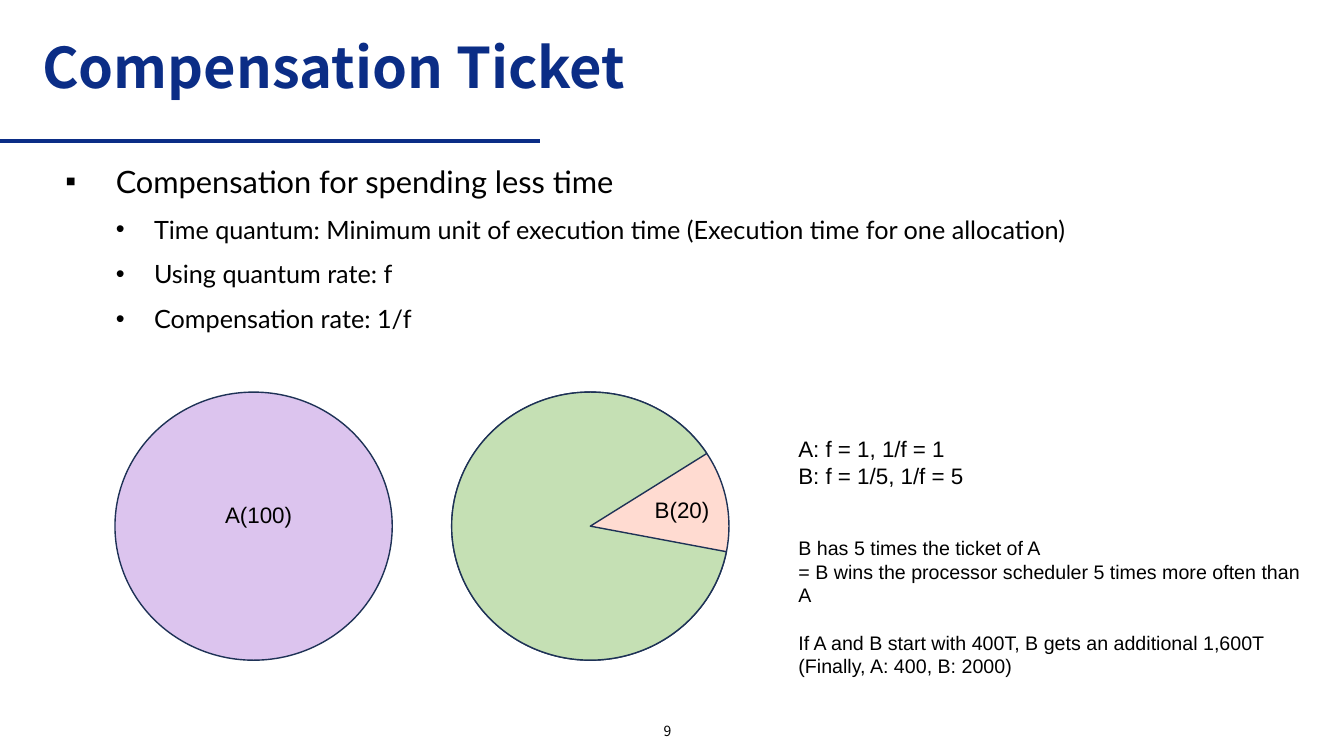
import pptx
import pptx.util
import pptx.dml.color
import pptx.enum.shapes
import pptx.enum.text
import pptx.oxml.ns
import lxml.etree

RGB = pptx.dml.color.RGBColor
SHAPE = pptx.enum.shapes.MSO_SHAPE
ALIGN = pptx.enum.text.PP_ALIGN
ANCHOR = pptx.enum.text.MSO_ANCHOR
Pt = pptx.util.Pt

NAVY = RGB(0x0B, 0x2D, 0x86)
EDGE = RGB(0x1E, 0x32, 0x56)
BLACK = RGB(0, 0, 0)
LILAC = RGB(0xDC, 0xC4, 0xEE)
GREEN = RGB(0xC5, 0xE0, 0xB4)
PEACH = RGB(0xFF, 0xDB, 0xD1)

HEAD = "Noto Sans CJK KR"
BODY = "Lato"
NOTE = "Arial"


def px(n):
    """Turn px, 100 to the inch, into EMU."""
    return pptx.util.Emu(n * 9144)


def tag(parent, name, **attrs):
    return lxml.etree.SubElement(parent, pptx.oxml.ns.qn(name), **attrs)


def style(par, font, size, color=BLACK, bold=False):
    par.font.name = font
    par.font.size = Pt(size)
    par.font.color.rgb = color
    par.font.bold = bold


def text(slide, box, lines, font, size, color=BLACK, bold=False,
         align=ALIGN.LEFT, anchor=ANCHOR.TOP):
    """Add a text box with one paragraph per line; return its paragraphs."""
    frame = slide.shapes.add_textbox(*map(px, box)).text_frame
    frame.word_wrap = True
    frame.vertical_anchor = anchor
    for i, line in enumerate(lines):
        par = frame.add_paragraph() if i else frame.paragraphs[0]
        par.text = line
        par.alignment = align
        style(par, font, size, color, bold)
    return frame.paragraphs


def header(slide, x, y, w, h):
    rule = slide.shapes.add_connector(
        pptx.enum.shapes.MSO_CONNECTOR.STRAIGHT,
        px(0), px(y + 116), px(536), px(y + 116))
    rule.line.color.rgb = NAVY
    rule.line.width = Pt(3)
    tag(rule._element.spPr, "a:effectLst")
    title = text(slide, (x, y, w, h), ["Compensation Ticket"], HEAD, 40,
                 NAVY, True, anchor=ANCHOR.MIDDLE)[0]
    title.line_spacing = 0.9


def bullets(slide, box, items):
    frame = slide.shapes.add_textbox(*map(px, box)).text_frame
    frame.word_wrap = True
    marks = [("▪", 50, 50, 22), ("•", 88, 38, 18)]
    for i, (level, line) in enumerate(items):
        mark, left, hang, size = marks[level]
        par = frame.add_paragraph() if i else frame.paragraphs[0]
        par.text = line
        par.level = level
        par.line_spacing = 1.2
        if i:
            par.space_before = Pt(6)
        props = par._p.get_or_add_pPr()
        props.set("marL", str(px(left)))
        props.set("indent", str(-px(hang)))
        tag(props, "a:buFont", typeface=NOTE)
        tag(props, "a:buChar", char=mark)
        style(par, BODY, size)


def disc(slide, kind, box, fill):
    shape = slide.shapes.add_shape(kind, *map(px, box))
    shape.shadow.inherit = False
    shape.fill.solid()
    shape.fill.fore_color.rgb = fill
    shape.line.color.rgb = EDGE
    shape.line.width = Pt(1)
    return shape


def whole(slide, x, y, w, h):
    disc(slide, SHAPE.OVAL, (x, y, w, h), LILAC)
    text(slide, (x + 97, y + 103, 91, 37), ["A(100)"], NOTE, 16,
         align=ALIGN.CENTER)


def share(slide, x, y, w, h):
    disc(slide, SHAPE.OVAL, (x, y, w, h), PEACH)
    rest = disc(slide, SHAPE.PIE, (x, y, w, h), GREEN)
    for i, angle in enumerate((10.65, 328.05)):
        rest.adjustments[i] = angle * 0.6  # 60000 per degree, over 100000
    text(slide, (x + 188, y + 98, 81, 37), ["B(20)"], NOTE, 16,
         align=ALIGN.CENTER)


def notes(slide, x, y, w, h):
    text(slide, (x, y, 297, 64),
         ["A: f = 1, 1/f = 1", "B: f = 1/5, 1/f = 5"], NOTE, 16)
    pars = text(slide, (x, y + 100, w, h - 100), [
        "B has 5 times the ticket of A",
        "= B wins the processor scheduler 5 times more often than A",
        "If A and B start with 400T, B gets an additional 1,600T\n"
        "(Finally, A: 400, B: 2000)"], NOTE, 14)
    pars[-1].space_before = Pt(17)


def main():
    deck = pptx.Presentation()
    deck.slide_width, deck.slide_height = px(1333), px(750)
    slide = deck.slides.add_slide(deck.slide_layouts[6])
    header(slide, 32, 24, 971, 91)
    text(slide, (512, 709, 300, 32), ["9"], HEAD, 10,
         align=ALIGN.CENTER, anchor=ANCHOR.MIDDLE)
    bullets(slide, (55, 149, 1214, 542), [
        (0, "Compensation for spending less time"),
        (1, "Time quantum: Minimum unit of execution time "
            "(Execution time for one allocation)"),
        (1, "Using quantum rate: f"),
        (1, "Compensation rate: 1/f")])
    whole(slide, 114, 389, 275, 266)
    share(slide, 448, 389, 275, 266)
    notes(slide, 782, 427, 532, 228)
    deck.save("out.pptx")


if __name__ == "__main__":
    main()
